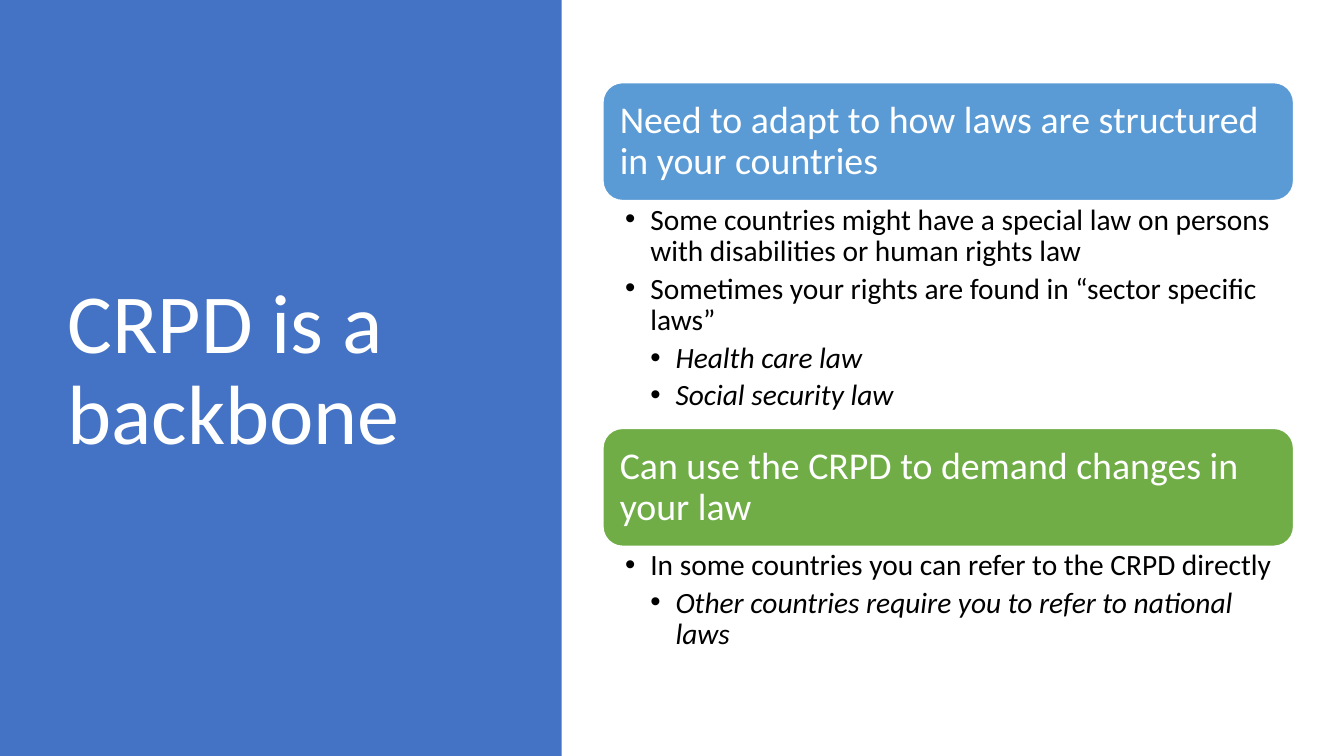
from lxml import etree
from pptx import Presentation
from pptx.dml.color import RGBColor
from pptx.enum.shapes import MSO_SHAPE as SHAPE
from pptx.enum.text import MSO_ANCHOR as ANCHOR, PP_ALIGN as ALIGN
from pptx.oxml.ns import qn
from pptx.util import Inches, Pt

COLORS = {"panel": "4472C4", "blue": "5B9BD5", "green": "70AD47",
          "white": "FFFFFF", "black": "000000"}
LEFT, WIDTH, HEADING_H = 5.98, 6.85, 1.17

# heading, colour, top, body height, bullets as (level, text)
SECTIONS = [
    ("Need to adapt to how laws are structured in your countries", "blue", 0.82, 2.26, [
        (1, "Some countries might have a special law on persons with disabilities or human rights law"),
        (1, "Sometimes your rights are found in “sector specific laws”"),
        (2, "Health care law"),
        (2, "Social security law"),
    ]),
    ("Can use the CRPD to demand changes in your law", "green", 4.25, 1.13, [
        (1, "In some countries you can refer to the CRPD directly"),
        (2, "Other countries require you to refer to national laws"),
    ]),
]


def add_block(kind, left, top, width, height, fill):
    sp = s.shapes.add_shape(kind, Inches(left), Inches(top), Inches(width), Inches(height))
    sp.shadow.inherit = False
    sp.fill.solid()
    sp.fill.fore_color.rgb = RGBColor.from_string(COLORS[fill])
    return sp


def write(p, text, size, color, italic=False):
    """Fill a paragraph with one left-aligned Calibri run at 90% line spacing."""
    p.alignment = ALIGN.LEFT
    p.line_spacing = 0.9
    r = p.add_run()
    r.text = text
    r.font.name = "Calibri"
    r.font.size = Pt(size)
    r.font.italic = italic
    r.font.color.rgb = RGBColor.from_string(COLORS[color])


prs = Presentation()
prs.slide_width, prs.slide_height = Inches(13.33), Inches(7.5)
s = prs.slides.add_slide(prs.slide_layouts[6])

panel = add_block(SHAPE.RECTANGLE, 0, 0, 5.57, 7.5, "panel")
panel.line.fill.background()

title = s.shapes.add_textbox(Inches(0.57), Inches(0.68), Inches(4.16), Inches(6.02))
tf = title.text_frame
tf.word_wrap = True
tf.vertical_anchor = ANCHOR.MIDDLE
write(tf.paragraphs[0], "CRPD is a backbone", 60, "white")

for heading, color, top, body_h, bullets in SECTIONS:
    bar = add_block(SHAPE.ROUNDED_RECTANGLE, LEFT, top, WIDTH, HEADING_H, color)
    bar.line.color.rgb = RGBColor.from_string(COLORS["white"])
    bar.line.width = Pt(1)
    tf = bar.text_frame
    tf.word_wrap = True
    tf.vertical_anchor = ANCHOR.MIDDLE
    tf.margin_left = tf.margin_right = tf.margin_top = tf.margin_bottom = Inches(0.11)
    write(tf.paragraphs[0], heading, 27, "white")

    body = s.shapes.add_textbox(Inches(LEFT), Inches(top + HEADING_H), Inches(WIDTH), Inches(body_h))
    tf = body.text_frame
    tf.word_wrap = True
    tf.margin_left, tf.margin_right = Inches(0.22), Inches(0.21)
    tf.margin_top = tf.margin_bottom = Inches(0.04)
    for i, (level, text) in enumerate(bullets):
        p = tf.add_paragraph() if i else tf.paragraphs[0]
        write(p, text, 21, "black", italic=level == 2)
        p.level = level
        p.space_after = Pt(4)
        pPr = p._p.get_or_add_pPr()
        pPr.set("marL", str(Inches(0.25 * level)))
        pPr.set("indent", str(Inches(-0.25)))
        etree.SubElement(pPr, qn("a:buFont")).set("typeface", "Arial")
        etree.SubElement(pPr, qn("a:buChar")).set("char", "•")

prs.save("out.pptx")
